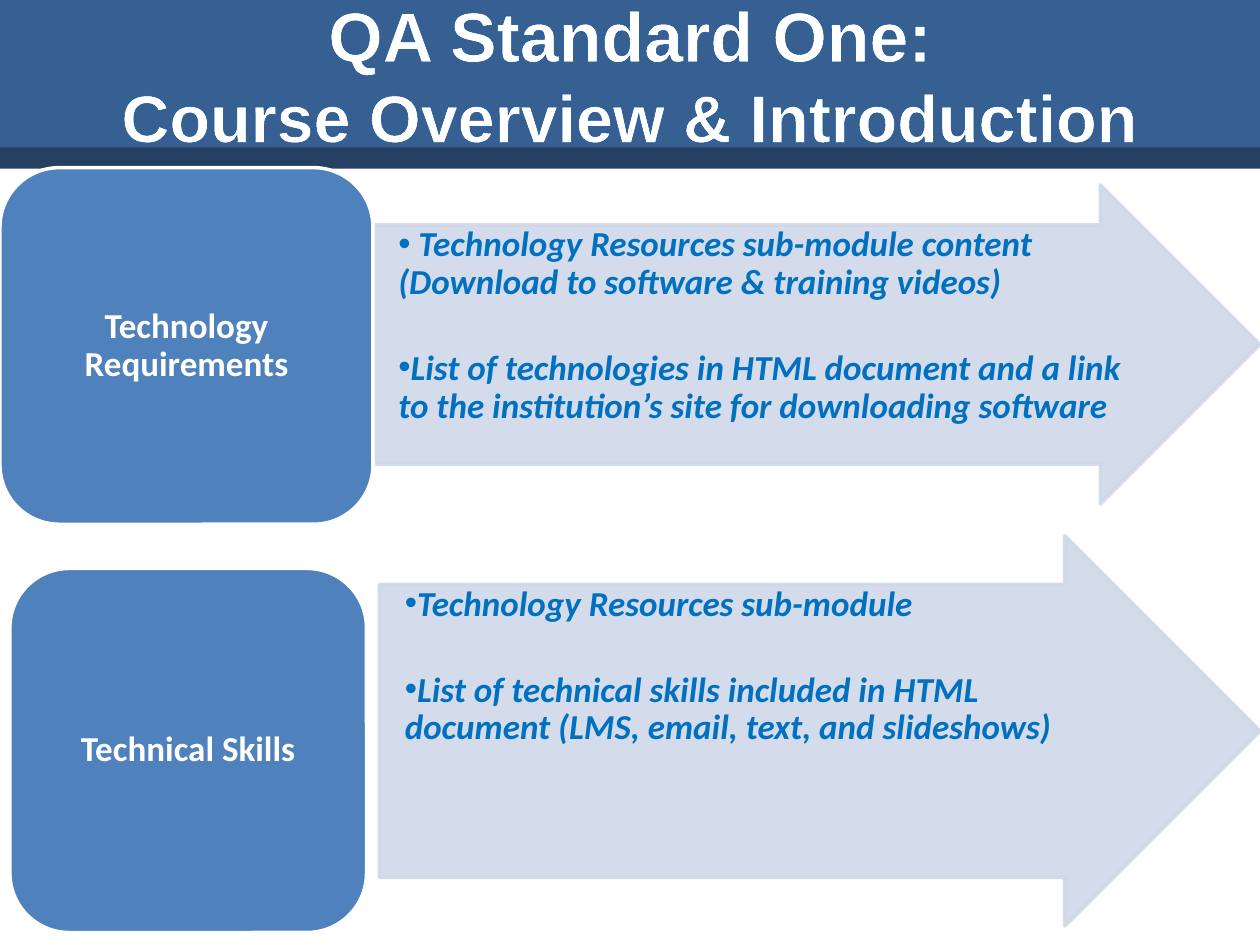
import pptx
import pptx.util
import pptx.dml.color
import pptx.enum.shapes
import pptx.enum.text
import pptx.oxml
import pptx.oxml.ns

Cm, Pt = pptx.util.Cm, pptx.util.Pt
RGB = pptx.dml.color.RGBColor
SHAPE = pptx.enum.shapes.MSO_SHAPE
ALIGN = pptx.enum.text.PP_ALIGN
ANCHOR = pptx.enum.text.MSO_ANCHOR

WHITE = RGB(0xFF, 0xFF, 0xFF)
HEADER = RGB(0x37, 0x60, 0x92)
STRIPE = RGB(0x25, 0x40, 0x61)
BOX = RGB(0x4F, 0x81, 0xBD)
ARROW = RGB(0xD0, 0xD8, 0xE8)
LIST = RGB(0x00, 0x70, 0xC0)
OUTLINE = RGB(0x05, 0x46, 0x97)

# Content: places are left, top, width, height in cm
TITLE = [("QA Standard One:", 40), ("Course Overview & Introduction", 38)]
BANDS = [((0, 0, 25.4, 3.05), HEADER), ((0, 2.97, 25.4, 0.43), STRIPE)]
ROWS = [
    {"label": "Technology Requirements",
     "box": (0, 3.38, 7.52, 7.19),
     "arrow": (7.52, 3.73, 17.88, 6.43),
     "points": [" Technology Resources sub-module content "
                "(Download to software & training videos)",
                "List of technologies in HTML document and a link to the "
                "institution’s site for downloading software"]},
    {"label": "Technical Skills",
     "box": (0.2, 11.46, 7.19, 7.34),
     "arrow": (7.65, 10.8, 17.75, 7.87),
     "points": ["Technology Resources sub-module",
                "List of technical skills included in HTML document "
                "(LMS, email, text, and slideshows)"]},
]
SHAFT, HEAD = 0.75, 0.5  # arrow proportions


def add_text(p, text, size=20, font="Calibri", color=WHITE, italic=False):
    r = p.add_run()
    r.text = text
    f = r.font
    f.size, f.name, f.bold, f.italic = Pt(size), font, True, italic
    f.color.rgb = color
    return r


def add_xml(parent, tag, index=None, **attrs):
    el = pptx.oxml.parse_xml(f"<a:{tag} {pptx.oxml.ns.nsdecls('a')}/>")
    for name, value in attrs.items():
        el.set(name, str(value))
    parent.insert(len(parent) if index is None else index, el)
    return el


def add_block(s, kind, place, fill, line=None):
    sp = s.shapes.add_shape(kind, *map(Cm, place))
    sp.shadow.inherit = False
    sp.fill.solid()
    sp.fill.fore_color.rgb = fill
    if line is None:
        sp.line.fill.background()
    else:
        sp.line.color.rgb = line
        sp.line.width = Pt(2)
    return sp


def set_frame(sp, anchor, x, y):
    tf = sp.text_frame
    tf.word_wrap = True
    tf.auto_size = pptx.enum.text.MSO_AUTO_SIZE.NONE
    tf.vertical_anchor = anchor
    tf.margin_left = tf.margin_right = Cm(x)
    tf.margin_top = tf.margin_bottom = Cm(y)
    return tf


def move(sp, place):
    sp.left, sp.top, sp.width, sp.height = map(Cm, place)
    s.shapes.element.append(sp.element)  # bring to front


prs = pptx.Presentation()
prs.slide_width, prs.slide_height = Cm(25.4), Cm(19.05)
s = prs.slides.add_slide(prs.slide_layouts[3])
title, *lists = s.placeholders

# Header
for place, color in BANDS:
    add_block(s, SHAPE.RECTANGLE, place, color)
move(title, (0, 0, 25.4, 2.97))
p = set_frame(title, ANCHOR.MIDDLE, 0.25, 0.13).paragraphs[0]
p.alignment = ALIGN.CENTER
for i, (text, size) in enumerate(TITLE):
    if i:
        p.add_line_break()
    r = add_text(p, text, size=size, font="Arial")
    ln = add_xml(r.font._element, "ln", 0, w=Pt(1))
    add_xml(add_xml(ln, "solidFill"), "srgbClr", val=OUTLINE)

# Rows: arrow, its list, then the label box
for row, body in zip(ROWS, lists):
    x, y, w, h = row["arrow"]
    arrow = add_block(s, SHAPE.RIGHT_ARROW, row["arrow"], ARROW, ARROW)
    arrow.adjustments[0], arrow.adjustments[1] = SHAFT, HEAD
    for clr in arrow.element.spPr.iter(pptx.oxml.ns.qn("a:srgbClr")):
        add_xml(clr, "alpha", val=90000)

    move(body, (x, y + h * (1 - SHAFT) / 2, w - h * HEAD * SHAFT, h * SHAFT))
    tf = set_frame(body, ANCHOR.TOP, 0.03, 0.03)
    for i, text in enumerate(row["points"]):
        p = tf.add_paragraph() if i else tf.paragraphs[0]
        pPr = p._p.get_or_add_pPr()
        pPr.set("marL", str(Cm(0.48)))
        pPr.set("indent", "0")
        add_xml(pPr, "buChar", char="•")
        p.line_spacing = 0.9
        p.space_before, p.space_after = Pt(27.4 if i else 0), Pt(0)
        add_text(p, text, color=LIST, italic=True)

    box = add_block(s, SHAPE.ROUNDED_RECTANGLE, row["box"], BOX, WHITE)
    p = set_frame(box, ANCHOR.MIDDLE, 0.2, 0.1).paragraphs[0]
    p.alignment = ALIGN.CENTER
    p.line_spacing = 0.9
    add_text(p, row["label"])

prs.save("out.pptx")
